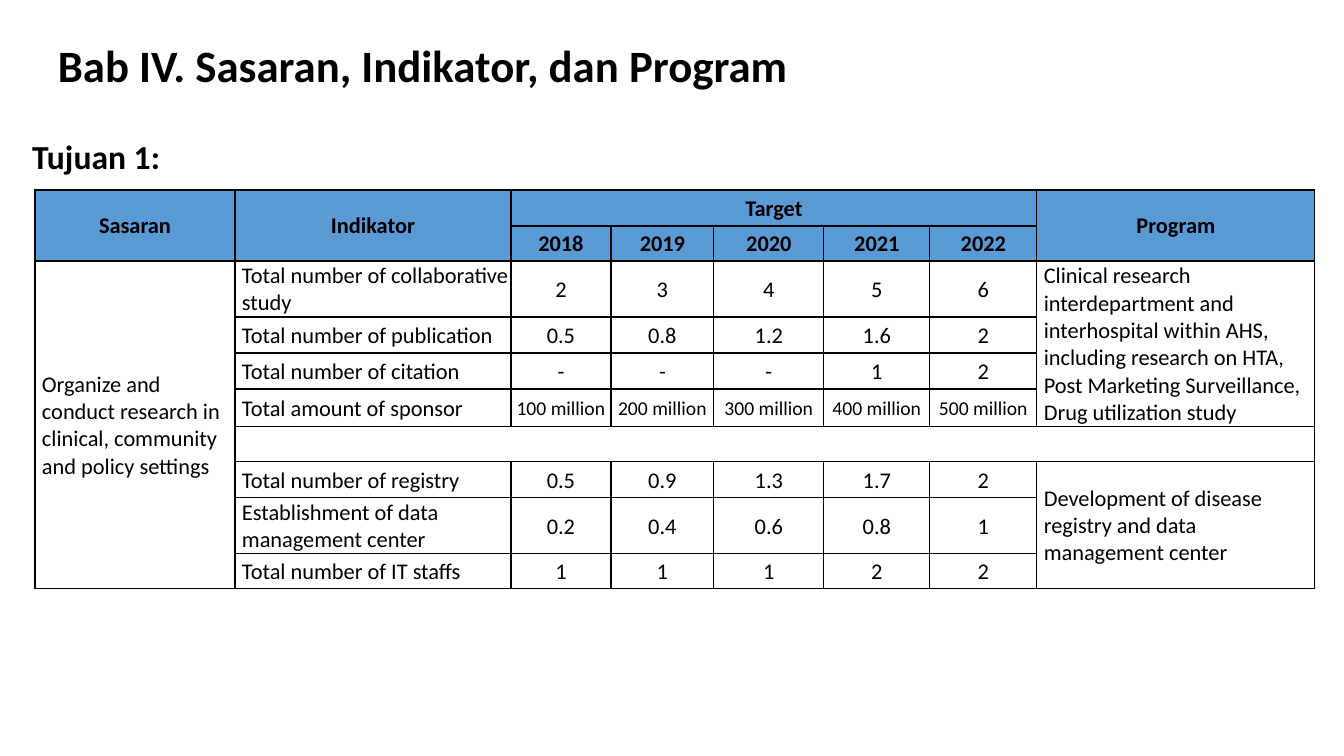
"""Build the slide of targets, indicators and programmes for the first goal."""
from dataclasses import dataclass

from lxml.etree import SubElement
from pptx import Presentation
from pptx.dml.color import RGBColor
from pptx.enum.text import MSO_ANCHOR, MSO_AUTO_SIZE, PP_ALIGN
from pptx.oxml.ns import qn
from pptx.util import Pt

CHAPTER = "Bab IV. Sasaran, Indikator, dan Program"
GOAL = "Tujuan 1:"
SASARAN = "Organize and conduct research in clinical, community and policy settings"
RESEARCH = ("Clinical research interdepartment and interhospital within AHS, "
            "including research on HTA, Post Marketing Surveillance, Drug utilization study")
REGISTRY = "Development of disease registry and data management center"

ROWS = [
    ("Sasaran", "Indikator", "Target", "", "", "", "", "Program"),
    ("", "", "2018", "2019", "2020", "2021", "2022", ""),
    (SASARAN, "Total number of collaborative study", "2", "3", "4", "5", "6", RESEARCH),
    ("", "Total number of publication", "0.5", "0.8", "1.2", "1.6", "2", ""),
    ("", "Total number of citation", "-", "-", "-", "1", "2", ""),
    ("", "Total amount of sponsor", "100 million", "200 million", "300 million",
     "400 million", "500 million", ""),
    ("",) * 8,
    ("", "Total number of registry", "0.5", "0.9", "1.3", "1.7", "2", REGISTRY),
    ("", "Establishment of data management center", "0.2", "0.4", "0.6", "0.8", "1", ""),
    ("", "Total number of IT staffs", "1", "1", "1", "2", "2", ""),
]
HEADER_ROWS = 2
SPACER_ROW = 6
TARGET_COLUMNS = range(2, 7)
LAST_COLUMN = 7
MERGES = [((0, 0), (1, 0)), ((0, 1), (1, 1)), ((0, 2), (0, 6)), ((0, 7), (1, 7)),
          ((2, 0), (9, 0)), ((2, 7), (5, 7)), ((7, 7), (9, 7))]

SLIDE_SIZE = (1344, 756)
CHAPTER_BOX = (42, 33, 756, 65)
GOAL_BOX = (22, 123, 1159, 72)
TABLE_CORNER = (35, 190)
COLUMN_WIDTHS = [200, 276, 100, 103, 110, 106, 107, 278]
ROW_HEIGHTS = [36, 35, 56, 36, 36, 38, 35, 36, 56, 35]
CELL_MARGIN = 1
LABEL_MARGIN = 7
EMU_PER_PX = 12192000 / 1344


@dataclass(frozen=True)
class Theme:
    font: str = "Calibri"
    ink: str = "000000"
    header: str = "5B9BD5"
    paper: str = "FFFFFF"
    chapter: int = 32
    goal: int = 24
    cell: int = 16
    amount: int = 14
    rule: float = 1
    thin_rule: float = 0.75


THEME = Theme()


def px(length):
    return round(length * EMU_PER_PX)


def write(frame, text, size, bold, align):
    paragraph = frame.paragraphs[0]
    paragraph.text = text
    paragraph.alignment = align
    font = paragraph.font
    font.name, font.size, font.bold = THEME.font, Pt(size), bold
    font.color.rgb = RGBColor.from_string(THEME.ink)
    return paragraph


def cell_rules(row, column, last_row):
    if row == SPACER_ROW and column > 0:
        return {"lnL": THEME.thin_rule if column == 1 else 0,
                "lnR": THEME.thin_rule if column == LAST_COLUMN else 0,
                "lnT": THEME.thin_rule, "lnB": THEME.thin_rule}
    beside_spacer = column > 0
    return {"lnL": THEME.rule, "lnR": THEME.rule,
            "lnT": THEME.thin_rule if beside_spacer and row == SPACER_ROW + 1 else THEME.rule,
            "lnB": THEME.thin_rule if beside_spacer and last_row == SPACER_ROW - 1 else THEME.rule}


def draw_rules(cell, rules):
    properties = cell._tc.get_or_add_tcPr()
    for side, width in rules.items():
        line = SubElement(properties, qn(f"a:{side}"), w=str(Pt(width)))
        if width:
            ink = SubElement(line, qn("a:solidFill"))
            SubElement(ink, qn("a:srgbClr"), val=THEME.ink)
        else:
            SubElement(line, qn("a:noFill"))


def format_cell(cell, row, column, text):
    is_header = row < HEADER_ROWS
    is_centred = is_header or column in TARGET_COLUMNS
    draw_rules(cell, cell_rules(row, column, row + cell.span_height - 1))
    cell.fill.solid()
    cell.fill.fore_color.rgb = RGBColor.from_string(THEME.header if is_header else THEME.paper)
    cell.margin_left = px(CELL_MARGIN if is_centred else LABEL_MARGIN)
    cell.margin_right = cell.margin_top = px(CELL_MARGIN)
    cell.margin_bottom = 0
    cell.vertical_anchor = MSO_ANCHOR.MIDDLE
    size = THEME.amount if text.endswith("million") else THEME.cell
    write(cell.text_frame, text, size, is_header,
          PP_ALIGN.CENTER if is_centred else PP_ALIGN.LEFT)


def add_goal(slide):
    goal = slide.shapes.title
    goal.left, goal.top, goal.width, goal.height = map(px, GOAL_BOX)
    goal.text_frame.auto_size = MSO_AUTO_SIZE.NONE
    goal.text_frame.vertical_anchor = MSO_ANCHOR.MIDDLE
    write(goal.text_frame, GOAL, THEME.goal, True, PP_ALIGN.LEFT).line_spacing = 0.9


def add_targets(slide):
    size = sum(COLUMN_WIDTHS), sum(ROW_HEIGHTS)
    targets = slide.shapes.add_table(len(ROWS), len(COLUMN_WIDTHS),
                                     *map(px, TABLE_CORNER + size)).table
    targets.first_row = targets.horz_banding = False
    for column, width in zip(targets.columns, COLUMN_WIDTHS):
        column.width = px(width)
    for row, height in zip(targets.rows, ROW_HEIGHTS):
        row.height = px(height)
    for first, last in MERGES:
        targets.cell(*first).merge(targets.cell(*last))
    for row, texts in enumerate(ROWS):
        for column, text in enumerate(texts):
            format_cell(targets.cell(row, column), row, column, text)


def add_chapter(slide):
    chapter = slide.shapes.add_textbox(*map(px, CHAPTER_BOX)).text_frame
    chapter.word_wrap = False
    chapter.auto_size = MSO_AUTO_SIZE.SHAPE_TO_FIT_TEXT
    write(chapter, CHAPTER, THEME.chapter, True, PP_ALIGN.RIGHT)


def main():
    deck = Presentation()
    deck.slide_width, deck.slide_height = map(px, SLIDE_SIZE)
    slide = deck.slides.add_slide(deck.slide_layouts.get_by_name("Title Only"))
    add_goal(slide)
    add_targets(slide)
    add_chapter(slide)
    deck.save("out.pptx")


if __name__ == "__main__":
    main()
